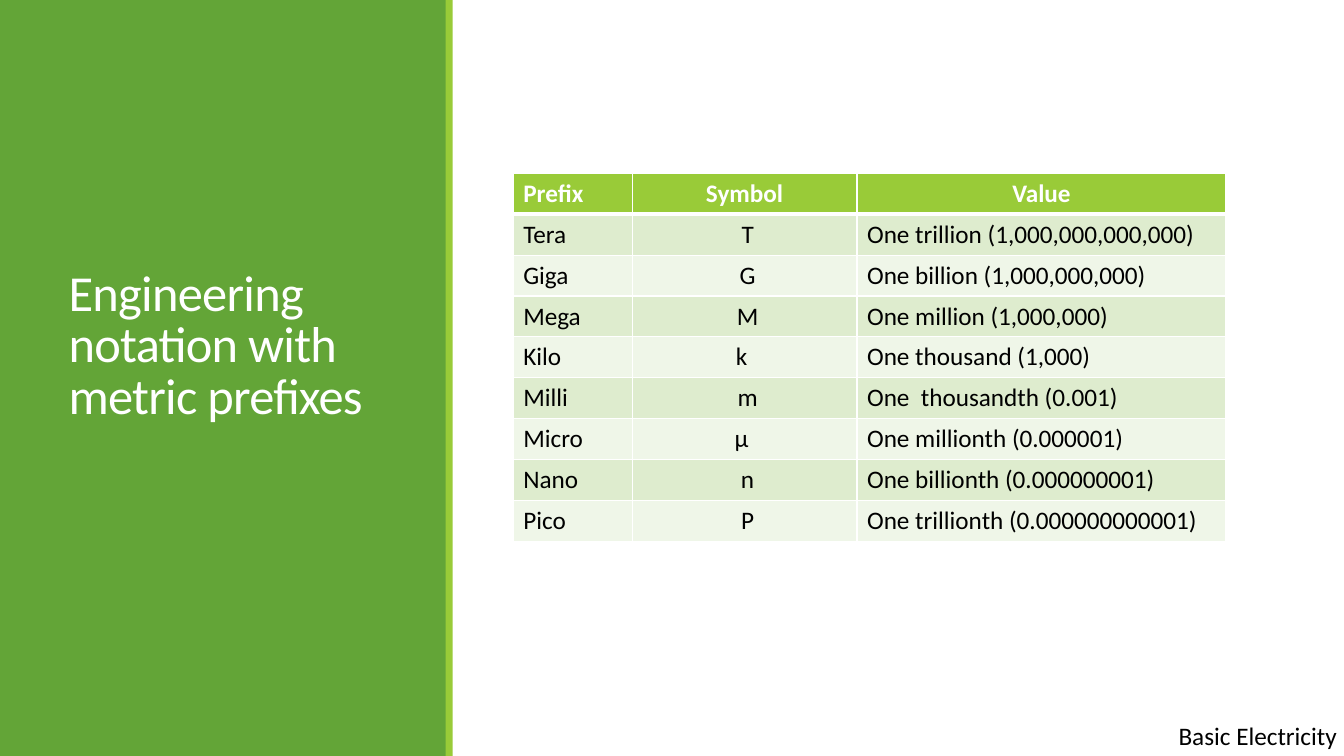
"""Build a slide with a table of metric prefixes beside a green title panel."""
from lxml import etree
from pptx import Presentation
from pptx.dml.color import RGBColor
from pptx.enum.shapes import MSO_SHAPE
from pptx.enum.text import MSO_ANCHOR, PP_ALIGN
from pptx.oxml.ns import qn
from pptx.util import Inches, Pt

RECT = MSO_SHAPE.RECTANGLE
LEFT, MID, RIGHT = PP_ALIGN.LEFT, PP_ALIGN.CENTER, PP_ALIGN.RIGHT
LOW = MSO_ANCHOR.BOTTOM

WIDE, HIGH = 13.33, 7.5
GREEN, LIME, WHITE, BLACK = "63A537", "99CB38", "FFFFFF", "000000"
STRIPES = ["EFF6E8", "DEECCE"]
TITLE = "Engineering notation with metric prefixes"
FOOTER = "Basic Electricity"
BANDS = [(0, 4.43, GREEN), (4.42, 0.07, LIME)]
COLS = [1.18, 2.23, 3.66]
ROW = 3.65 / 9
ROWS = [
    ("Prefix", "Symbol", "Value"),
    ("Tera", "T", "One trillion (1,000,000,000,000)"),
    ("Giga", "G", "One billion (1,000,000,000)"),
    ("Mega", "M", "One million (1,000,000)"),
    ("Kilo", "k", "One thousand (1,000)"),
    ("Milli", "m", "One  thousandth (0.001)"),
    ("Micro", "µ", "One millionth (0.000001)"),
    ("Nano", "n", "One billionth (0.000000001)"),
    ("Pico", "P", "One trillionth (0.000000000001)"),
]


def paint(fill, color):
    fill.solid()
    fill.fore_color.rgb = RGBColor.from_string(color)


def write(frame, text, size, color, align=LEFT, bold=False):
    frame.text = text
    frame.word_wrap = True
    para = frame.paragraphs[0]
    para.alignment = align
    font = para.runs[0].font
    font.name, font.size, font.bold = "Calibri", Pt(size), bold
    font.color.rgb = RGBColor.from_string(color)
    return para


def edge(cell, head):
    props = cell._tc.get_or_add_tcPr()
    for side in "LRTB":
        width = 3 if head and side == "B" else 1
        line = etree.SubElement(props, qn(f"a:ln{side}"), w=str(Pt(width)))
        fill = etree.SubElement(line, qn("a:solidFill"))
        etree.SubElement(fill, qn("a:srgbClr"), val=WHITE)


def add_bands(slide):
    for left, width, color in BANDS:
        band = slide.shapes.add_shape(RECT, Inches(left), 0, Inches(width), Inches(HIGH))
        band.shadow.inherit = False
        paint(band.fill, color)
        band.line.fill.background()


def add_title(slide):
    title = slide.shapes.title
    title.element.getparent().append(title.element)
    title.left, title.top = Inches(0.58), Inches(1.76)
    title.width, title.height = Inches(3.5), Inches(2.5)
    para = write(title.text_frame, TITLE, 36, WHITE)
    title.text_frame.vertical_anchor = LOW
    para.line_spacing = 0.85
    para.runs[0].font._element.set("spc", "-50")


def add_grid(slide):
    frame = slide.shapes.add_table(
        len(ROWS), len(COLS), Inches(5.09), Inches(1.72),
        Inches(sum(COLS)), Inches(ROW * len(ROWS)))
    table = frame.table
    for col, width in zip(table.columns, COLS):
        col.width = Inches(width)
    for r, row in enumerate(ROWS):
        head = r == 0
        table.rows[r].height = Inches(ROW)
        for c, text in enumerate(row):
            cell = table.cell(r, c)
            align = MID if c == 1 or head and c == 2 else LEFT
            write(cell.text_frame, text, 18, WHITE if head else BLACK, align, head)
            edge(cell, head)
            paint(cell.fill, LIME if head else STRIPES[r % 2])
            if c == 1 and not head:
                if text in "kµ":
                    cell.margin_right = Inches(0.16)
                else:
                    cell.margin_left = Inches(0.16)


def add_footer(slide):
    box = slide.shapes.add_textbox(Inches(5.73), Inches(7.1), Inches(WIDE - 5.73), Inches(0.4))
    write(box.text_frame, FOOTER, 18, BLACK, RIGHT)
    box.text_frame.margin_right = Inches(0.07)


def main():
    deck = Presentation()
    deck.slide_width, deck.slide_height = Inches(WIDE), Inches(HIGH)
    slide = deck.slides.add_slide(deck.slide_layouts[5])
    paint(slide.background.fill, WHITE)
    add_bands(slide)
    add_footer(slide)
    add_title(slide)
    add_grid(slide)
    deck.save("out.pptx")


if __name__ == "__main__":
    main()
